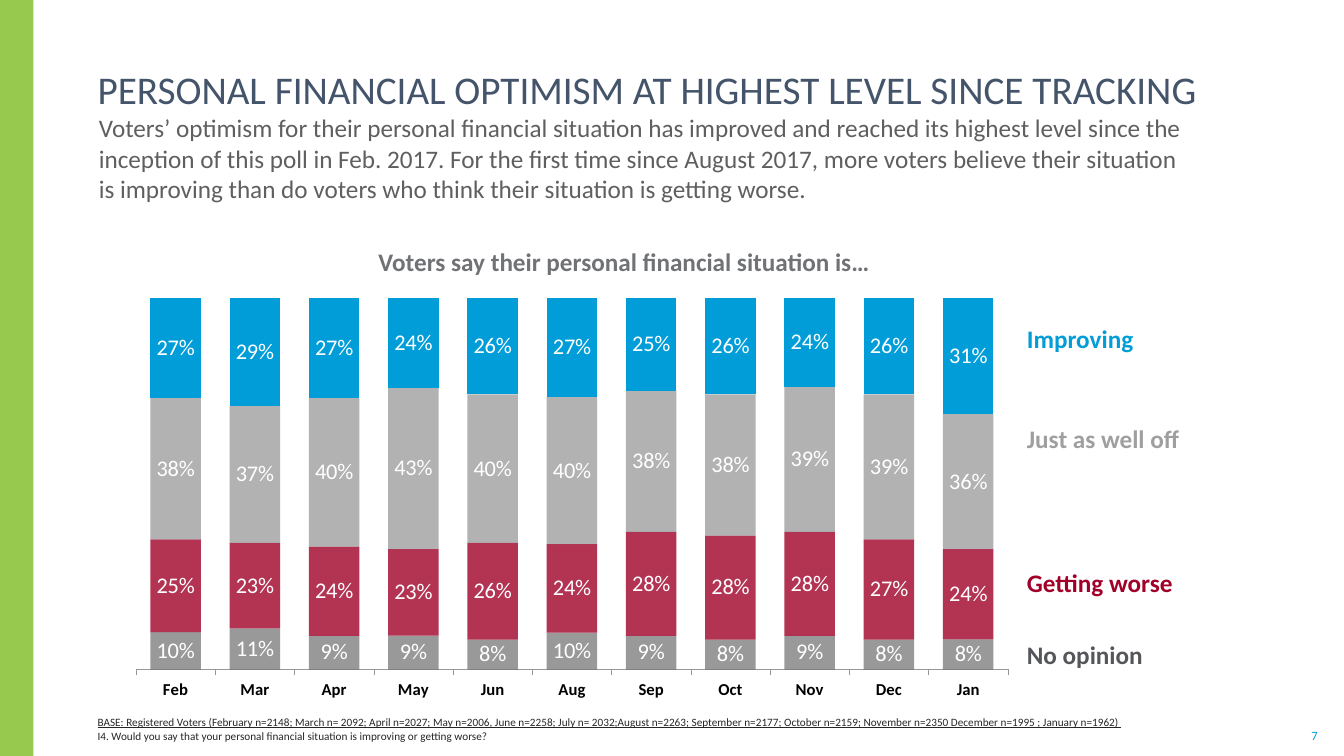
import pptx
import pptx.chart.data
import pptx.dml.color
import pptx.enum.chart
import pptx.enum.shapes
import pptx.enum.text
import pptx.oxml
import pptx.oxml.ns
import pptx.util

Cm, Pt = pptx.util.Cm, pptx.util.Pt
qn = pptx.oxml.ns.qn
ALIGN = pptx.enum.text.PP_ALIGN
ANCHOR = pptx.enum.text.MSO_ANCHOR
BLUE, RED, WHITE = "009DD9", "A10028", "FFFFFF"
SIDE = 0.25  # left and right text inset, cm

MONTHS = ["Feb", "Mar", "Apr", "May", "Jun", "Aug", "Sep", "Oct", "Nov", "Dec", "Jan"]
# name, colour, opacity in percent, values in percent
SERIES = [
    ("No opinion", "000000", 40, [10, 11, 9, 9, 8, 10, 9, 8, 9, 8, 8]),
    ("Getting worse", RED, 80, [25, 23, 24, 23, 26, 24, 28, 28, 28, 27, 24]),
    ("Just as well off", "7F7F7F", 60, [38, 37, 40, 43, 40, 40, 38, 38, 39, 39, 36]),
    ("Improving", BLUE, 100, [27, 29, 27, 24, 26, 27, 25, 26, 24, 26, 31]),
]
# text, top, width, colour
KEYS = [
    ("Improving", 8.03, 3.23, BLUE),
    ("Just as well off", 10.54, 4.42, "9F9F9F"),
    ("Getting worse", 14.17, 4.27, RED),
    ("No opinion", 15.98, 3.45, "545659"),
]
TITLE = "PERSONAL FINANCIAL OPTIMISM AT HIGHEST LEVEL SINCE TRACKING"
SUMMARY = (
    "Voters’ optimism for their personal financial situation has improved and reached its "
    "highest level since the inception of this poll in Feb. 2017. For the first time since "
    "August 2017, more voters believe their situation is improving than do voters who think "
    "their situation is getting worse."
)
BASE = (
    "BASE: Registered Voters (February n=2148; March n= 2092; April n=2027; May n=2006, "
    "June n=2258; July n= 2032;August n=2263; September n=2177; October n=2159; "
    "November n=2350 December n=1995 ; January n=1962)"
)
QUESTION = "I4. Would you say that your personal financial situation is improving or getting worse?"


def rgb(color):
    return pptx.dml.color.RGBColor.from_string(color)


def apply(obj, **values):
    for name, value in values.items():
        setattr(obj, name, value)


def set_font(font, size, color, **values):
    apply(font, name="Calibri", size=Pt(size), **values)
    font.color.rgb = rgb(color)


def set_fill(fill, color, opacity=100):
    fill.solid()
    fill.fore_color.rgb = rgb(color)
    if opacity < 100:
        clr = fill._xPr.find(".//" + qn("a:srgbClr"))
        clr.append(pptx.oxml.parse_xml(
            f'<a:alpha {pptx.oxml.ns.nsdecls("a")} val="{opacity * 1000}"/>'))


def place(sp, left, top, width, height):
    apply(sp, left=Cm(left), top=Cm(top), width=Cm(width), height=Cm(height))


def set_frame(tf, side, edge, anchor, wrap):
    apply(tf, margin_left=Cm(side), margin_right=Cm(side), margin_top=Cm(edge),
          margin_bottom=Cm(edge), vertical_anchor=anchor, word_wrap=wrap,
          auto_size=pptx.enum.text.MSO_AUTO_SIZE.NONE)


def write(p, text, size, color, align=ALIGN.LEFT, **font):
    p.alignment = align
    r = p.add_run()
    r.text = text
    set_font(r.font, size, color, **font)


def fill_placeholder(sp, box, anchor, lines, size, color, before=0, spacing=1.0):
    """Move a placeholder and write lines of (text, underline) without bullets."""
    place(sp, *box)
    tf = sp.text_frame
    set_frame(tf, SIDE, 0, anchor, True)
    for i, (text, underline) in enumerate(lines):
        p = tf.add_paragraph() if i else tf.paragraphs[0]
        pPr = p._p.get_or_add_pPr()
        pPr.set("marL", "0")
        pPr.set("indent", "0")
        pPr.append(pptx.oxml.parse_xml(f'<a:buNone {pptx.oxml.ns.nsdecls("a")}/>'))
        apply(p, space_before=Pt(before if i else 0), line_spacing=spacing)
        write(p, text, size, color, underline=underline)


def add_label(s, box, text, size, color, align=ALIGN.LEFT, side=SIDE, edge=0.13, bold=True):
    sp = s.shapes.add_textbox(0, 0, 0, 0)
    place(sp, *box)
    set_frame(sp.text_frame, side, edge, ANCHOR.TOP if edge else ANCHOR.MIDDLE, False)
    write(sp.text_frame.paragraphs[0], text, size, color, align, bold=bold)


def add_side_bar(s, width, height):
    sp = s.shapes.add_shape(pptx.enum.shapes.MSO_SHAPE.RECTANGLE, 0, 0, Cm(width), height)
    sp.shadow.inherit = False
    set_fill(sp.fill, "96C94D")
    sp.line.fill.background()


def set_plot_area(chart, x, y, w, h):
    area = chart._chartSpace.find(".//" + qn("c:plotArea"))
    for layout in area.findall(qn("c:layout")):
        area.remove(layout)
    sizes = "".join(f'<c:{k} val="{v}"/>' for k, v in zip("xywh", (x, y, w, h)))
    area.insert(0, pptx.oxml.parse_xml(
        f'<c:layout {pptx.oxml.ns.nsdecls("c")}><c:manualLayout>'
        '<c:layoutTarget val="inner"/><c:xMode val="edge"/><c:yMode val="edge"/>'
        f'{sizes}</c:manualLayout></c:layout>'))


def add_opinion_chart(s, left, top, width, height):
    data = pptx.chart.data.CategoryChartData(number_format="0%")
    data.categories = MONTHS
    for name, _, _, values in SERIES:
        data.add_series(name, [v / 100 for v in values])
    kind = pptx.enum.chart.XL_CHART_TYPE.COLUMN_STACKED_100
    chart = s.shapes.add_chart(
        kind, Cm(left), Cm(top), Cm(width), Cm(height), data).chart
    apply(chart, has_legend=False, has_title=False)
    set_font(chart.font, 10, "5F5F5F")
    set_plot_area(chart, 0.03, 0.03, 0.96, 0.89)

    plot = chart.plots[0]
    apply(plot, gap_width=57, overlap=100, vary_by_categories=False)
    for series, (_, color, opacity, _) in zip(plot.series, SERIES):
        set_fill(series.format.fill, color, opacity)
        labels = series.data_labels
        apply(labels, show_value=True, number_format="0%", number_format_is_linked=False,
              position=pptx.enum.chart.XL_LABEL_POSITION.CENTER)
        set_font(labels.font, 16, WHITE)

    apply(chart.value_axis, visible=False, has_major_gridlines=False,
          minimum_scale=0, maximum_scale=1)
    axis = chart.category_axis
    axis.major_tick_mark = pptx.enum.chart.XL_TICK_MARK.OUTSIDE
    set_font(axis.tick_labels.font, 11.9, "000000", bold=True)
    axis.format.line.width = Pt(0.25)
    axis.format.line.color.rgb = rgb("979797")


def main():
    prs = pptx.Presentation()
    apply(prs, slide_width=Cm(33.87), slide_height=Cm(19.05))
    s = prs.slides.add_slide(prs.slide_layouts.get_by_name("Two Content"))
    title, summary, notes = s.placeholders

    add_side_bar(s, 0.84, prs.slide_height)
    fill_placeholder(title, (2.21, 1.27, 28.35, 1.57), ANCHOR.BOTTOM,
                     [(TITLE, False)], 28, "44546A", spacing=0.85)
    fill_placeholder(summary, (2.24, 2.84, 28.07, 0.86), ANCHOR.TOP,
                     [(SUMMARY, False)], 18, "5F5F5F")
    fill_placeholder(notes, (2.21, 17.7, 30.25, 1.02), ANCHOR.BOTTOM,
                     [(BASE, True), (QUESTION, False)], 8, "262626", before=0.6)

    add_opinion_chart(s, 2.74, 7.19, 22.89, 10.52)
    add_label(s, (9.09, 6.07, 13.28, 1.02),
              "Voters say their personal financial situation is…", 18, "707276", ALIGN.CENTER)
    for text, top, width, color in KEYS:
        add_label(s, (25.63, top, width, 1.02), text, 18, color)
    add_label(s, (32.94, 18.34, 0.38, 0.38), "7", 9, BLUE, ALIGN.CENTER,
              side=0, edge=0, bold=False)
    prs.save("out.pptx")


if __name__ == "__main__":
    main()
